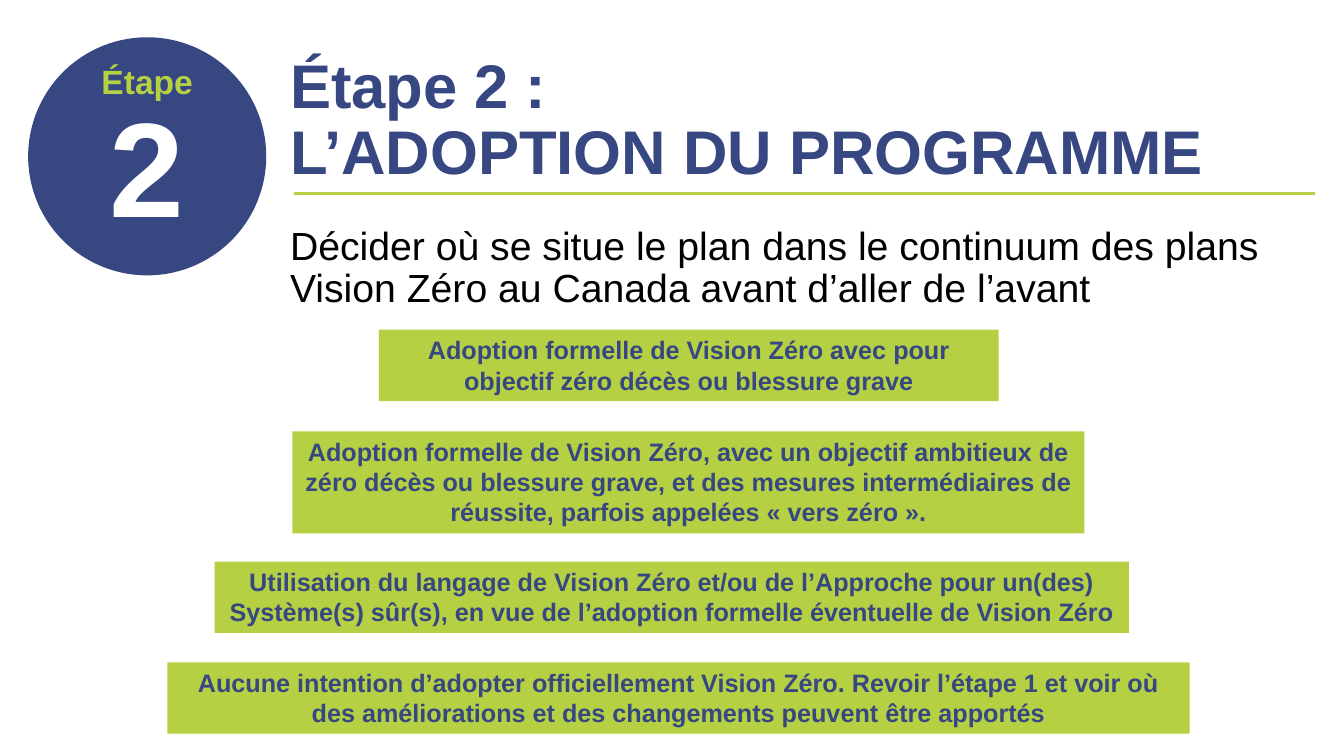
from dataclasses import dataclass

from lxml import etree
from pptx import Presentation
from pptx.dml.color import RGBColor
from pptx.enum.shapes import MSO_CONNECTOR, MSO_SHAPE
from pptx.enum.text import MSO_ANCHOR, MSO_AUTO_SIZE, PP_ALIGN
from pptx.oxml.ns import qn
from pptx.util import Cm, Pt

LEFT, CENTER = PP_ALIGN.LEFT, PP_ALIGN.CENTER
TOP, MIDDLE, BOTTOM = MSO_ANCHOR.TOP, MSO_ANCHOR.MIDDLE, MSO_ANCHOR.BOTTOM
GROW = MSO_AUTO_SIZE.SHAPE_TO_FIT_TEXT
OVAL, RECTANGLE = MSO_SHAPE.OVAL, MSO_SHAPE.RECTANGLE
STRAIGHT = MSO_CONNECTOR.STRAIGHT


@dataclass(frozen=True)
class Theme:
    font: str = "Arial"
    navy: str = "374781"
    lime: str = "B6D043"
    white: str = "FFFFFF"
    black: str = "000000"
    number: int = 96
    title: int = 44
    body: int = 28
    label: int = 24
    option: int = 18
    rule: int = 2


OPTIONS = [
    (9.55, 8.31, 15.62, 1.8,
     "Adoption formelle de Vision Zéro avec pour objectif zéro décès ou blessure grave"),
    (7.37, 10.87, 19.96, 2.57,
     "Adoption formelle de Vision Zéro, avec un objectif ambitieux de zéro décès "
     "ou blessure grave, et des mesures intermédiaires de réussite, "
     "parfois appelées « vers zéro »."),
    (5.41, 14.15, 23.04, 1.8,
     "Utilisation du langage de Vision Zéro et/ou de l’Approche pour un(des) "
     "Système(s) sûr(s), en vue de l’adoption formelle éventuelle de Vision Zéro"),
    (4.22, 16.69, 25.76, 1.8,
     "Aucune intention d’adopter officiellement Vision Zéro. Revoir l’étape 1 et voir où "
     "des améliorations et des changements peuvent être apportés"),
]


def write(tf, text, *, font, size, color, bold=False, align=LEFT,
          spacing=None, before=0, after=0):
    p = tf.paragraphs[0] if not tf.text else tf.add_paragraph()
    p.alignment = align
    p.line_spacing = spacing
    p.space_before, p.space_after = Pt(before), Pt(after)
    for i, line in enumerate(text.split("\n")):
        if i:
            p.add_line_break()
        r = p.add_run()
        r.text = line
        r.font.name = font
        r.font.size = Pt(size)
        r.font.bold = bold
        r.font.color.rgb = RGBColor.from_string(color)


class Deck:
    def __init__(self, theme):
        self.theme = theme
        self.prs = Presentation()
        self.prs.slide_width, self.prs.slide_height = Cm(33.87), Cm(19.05)
        self.slide = self.prs.slides.add_slide(self.prs.slide_layouts[6])

    def rule(self, x1, x2, y, color):
        line = self.slide.shapes.add_connector(STRAIGHT, Cm(x1), Cm(y), Cm(x2), Cm(y))
        line.line.color.rgb = RGBColor.from_string(color)
        line.line.width = Pt(self.theme.rule)
        etree.SubElement(line._element.spPr, qn("a:effectLst"))

    def shape(self, kind, x, y, w, h, fill):
        sp = self.slide.shapes.add_shape(kind, Cm(x), Cm(y), Cm(w), Cm(h))
        sp.shadow.inherit = False
        sp.fill.solid()
        sp.fill.fore_color.rgb = RGBColor.from_string(fill)
        sp.line.fill.background()
        sp.text_frame.word_wrap = True
        return sp.text_frame

    def text(self, x, y, w, h, text, anchor=TOP, **fmt):
        tf = self.slide.shapes.add_textbox(Cm(x), Cm(y), Cm(w), Cm(h)).text_frame
        tf.word_wrap = True
        tf.vertical_anchor = anchor
        write(tf, text, font=self.theme.font, **fmt)

    def badge(self, x, y, size, label, number):
        t = self.theme
        tf = self.shape(OVAL, x, y, size, size, t.navy)
        tf.vertical_anchor = MIDDLE
        for text, pt, color in ((label, t.label, t.lime), (number, t.number, t.white)):
            write(tf, text, font=t.font, size=pt, color=color, bold=True,
                  align=CENTER, spacing=0.9)

    def option(self, x, y, w, h, text):
        t = self.theme
        tf = self.shape(RECTANGLE, x, y, w, h, t.lime)
        tf.vertical_anchor = TOP
        tf.auto_size = GROW
        write(tf, text, font=t.font, size=t.option, color=t.navy, bold=True, align=CENTER)


def main():
    t = Theme()
    deck = Deck(t)
    deck.rule(7.42, 33.15, 4.88, t.lime)
    deck.badge(0.71, 0.94, 6, "Étape", "2")
    deck.text(7.06, 1.19, 26.11, 3.68, "Étape 2 :\nL’ADOPTION DU PROGRAMME", BOTTOM,
              size=t.title, color=t.navy, bold=True, spacing=0.9)
    deck.text(7.06, 5.59, 24.97, 12.09,
              "Décider où se situe le plan dans le continuum des plans "
              "Vision Zéro au Canada avant d’aller de l’avant",
              size=t.body, color=t.black, spacing=0.9, before=10, after=12)
    for option in OPTIONS:
        deck.option(*option)
    deck.prs.save("out.pptx")


if __name__ == "__main__":
    main()
